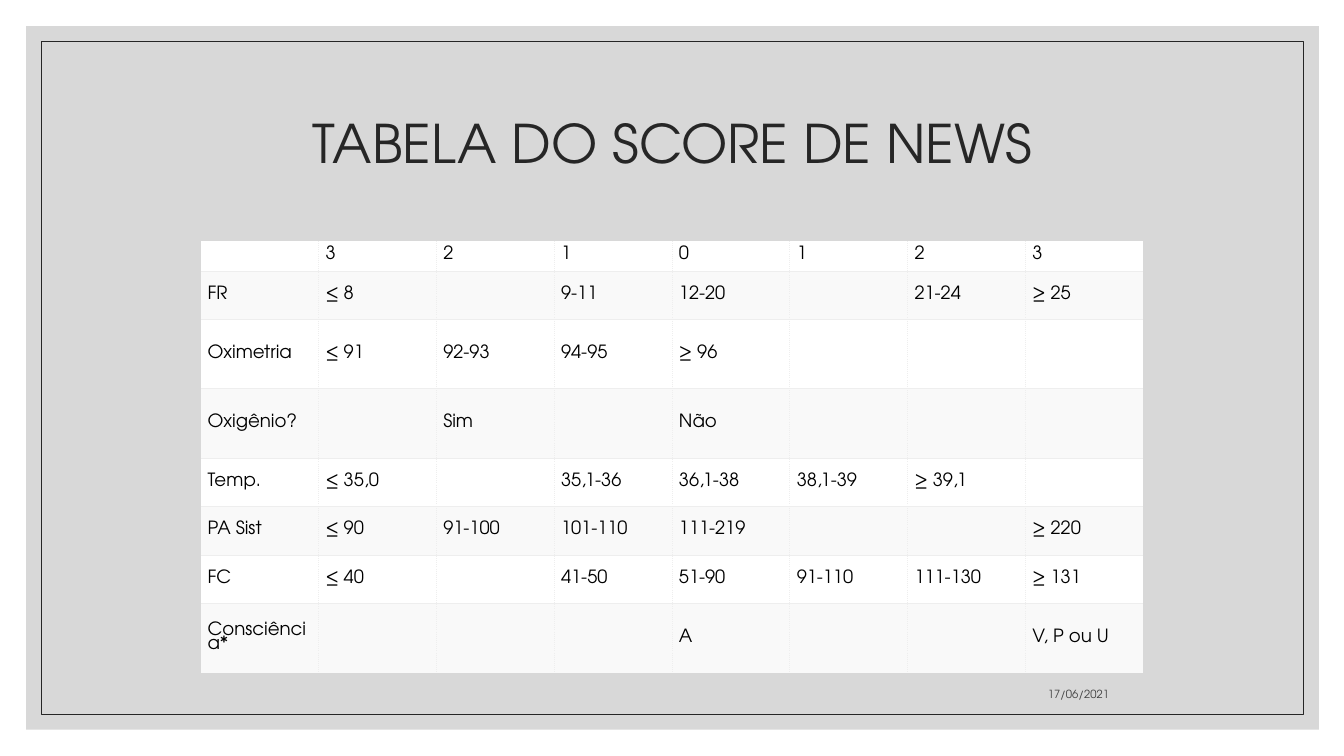
import lxml.etree
import pptx
import pptx.dml.color
import pptx.enum.shapes
import pptx.enum.text
import pptx.oxml
import pptx.oxml.ns
import pptx.util

Inches = pptx.util.Inches
RGBColor = pptx.dml.color.RGBColor
ALIGN = pptx.enum.text.PP_ALIGN
ANCHOR = pptx.enum.text.MSO_ANCHOR
RECTANGLE = pptx.enum.shapes.MSO_SHAPE.RECTANGLE

FONT = "TeX Gyre Adventor"
PANEL = RGBColor(0xBF, 0xBF, 0xBF)
DARK = RGBColor(0x26, 0x26, 0x26)
DATE_GREY = RGBColor(0x40, 0x40, 0x40)
BLACK = RGBColor(0, 0, 0)
GRID = RGBColor(0xEE, 0xEE, 0xEE)
STRIPES = (RGBColor(0xFF, 0xFF, 0xFF), RGBColor(0xF9, 0xF9, 0xF9))

SCORES = (
    ("", "3", "2", "1", "0", "1", "2", "3"),
    ("FR", "≤ 8", "", "9-11", "12-20", "", "21-24", "≥ 25"),
    ("Oximetria", "≤ 91", "92-93", "94-95", "≥ 96", "", "", ""),
    ("Oxigênio?", "", "Sim", "", "Não", "", "", ""),
    ("Temp.", "≤ 35,0", "", "35,1-36", "36,1-38", "38,1-39", "≥ 39,1", ""),
    ("PA Sist", "≤ 90", "91-100", "101-110", "111-219", "", "", "≥ 220"),
    ("FC", "≤ 40", "", "41-50", "51-90", "91-110", "111-130", "≥ 131"),
    ("Consciência*", "", "", "", "A", "", "", "V, P ou U"),
)
ROW_HEIGHTS = (0.28, 0.48, 0.69, 0.69, 0.48, 0.48, 0.48, 0.69)


def style_paragraph(para, size, color, align=ALIGN.LEFT, spacing=1.0):
    para.font.name = FONT
    para.font.size = pptx.util.Pt(size)
    para.font.color.rgb = color
    para.alignment = align
    para.line_spacing = spacing


def add_frame(page, left, top, width, height):
    """Draw the translucent panel and the thin outline inset within it."""
    panel = page.shapes.add_shape(
        RECTANGLE, Inches(left), Inches(top), Inches(width), Inches(height))
    panel.shadow.inherit = False
    panel.fill.solid()
    panel.fill.fore_color.rgb = PANEL
    panel.line.fill.background()
    color = panel.fill._xPr.find(".//" + pptx.oxml.ns.qn("a:srgbClr"))
    lxml.etree.SubElement(color, pptx.oxml.ns.qn("a:alpha"), val="60000")

    inset = 0.15
    outline = page.shapes.add_shape(
        RECTANGLE, Inches(left + inset), Inches(top + inset),
        Inches(width - 2 * inset), Inches(height - 2 * inset))
    outline.shadow.inherit = False
    outline.fill.background()
    outline.line.color.rgb = DARK
    outline.line.width = pptx.util.Pt(0.5)


def add_text(page, left, top, width, height, text, anchor, **style):
    box = page.shapes.add_textbox(
        Inches(left), Inches(top), Inches(width), Inches(height))
    frame = box.text_frame
    frame.word_wrap = True
    frame.vertical_anchor = anchor
    frame.text = text
    style_paragraph(frame.paragraphs[0], **style)


def set_border(cell, side, dash, visible):
    """Give one side of a cell a thin grid line, or none at all."""
    if visible:
        paint = (f'<a:solidFill><a:srgbClr val="{GRID}"/></a:solidFill>'
                 f'<a:prstDash val="{dash}"/>')
    else:
        paint = "<a:noFill/>"
    line = pptx.oxml.parse_xml(
        f'<a:ln{side} {pptx.oxml.ns.nsdecls("a")} w="{pptx.util.Pt(0.6)}">'
        f"{paint}</a:ln{side}>")
    cell._tc.get_or_add_tcPr().append(line)


def add_score_table(page, left, top, width):
    rows, columns = len(SCORES), len(SCORES[0])
    table = page.shapes.add_table(
        rows, columns, Inches(left), Inches(top), Inches(width),
        Inches(sum(ROW_HEIGHTS))).table
    for column in table.columns:
        column.width = Inches(width / columns)
    for r, values in enumerate(SCORES):
        table.rows[r].height = Inches(ROW_HEIGHTS[r])
        for c, value in enumerate(values):
            cell = table.cell(r, c)
            cell.text = value
            style_paragraph(cell.text_frame.paragraphs[0], 13, BLACK, spacing=0.8)
            cell.vertical_anchor = ANCHOR.MIDDLE
            cell.margin_left = cell.margin_right = Inches(0.07)
            cell.margin_top = cell.margin_bottom = Inches(0.04)
            set_border(cell, "L", "dot", c > 0)
            set_border(cell, "R", "dot", c < columns - 1)
            set_border(cell, "T", "solid", r > 0)
            set_border(cell, "B", "solid", r < rows - 1)
            cell.fill.solid()
            cell.fill.fore_color.rgb = STRIPES[r % 2]


def main():
    deck = pptx.Presentation()
    deck.slide_width = Inches(13.33)
    deck.slide_height = Inches(7.5)
    page = deck.slides.add_slide(deck.slide_layouts[6])
    add_frame(page, 0.26, 0.26, 12.82, 6.98)
    add_text(page, 1.17, 0.7, 11, 1.5, "TABELA DO SCORE DE NEWS", ANCHOR.MIDDLE,
             size=38, color=DARK, align=ALIGN.CENTER, spacing=0.9)
    add_score_table(page, 1.99, 2.39, 9.35)
    add_text(page, 7.94, 6.6, 3.16, 0.4, "17/06/2021", ANCHOR.BOTTOM,
             size=8, color=DATE_GREY, align=ALIGN.RIGHT)
    deck.save("out.pptx")


if __name__ == "__main__":
    main()
